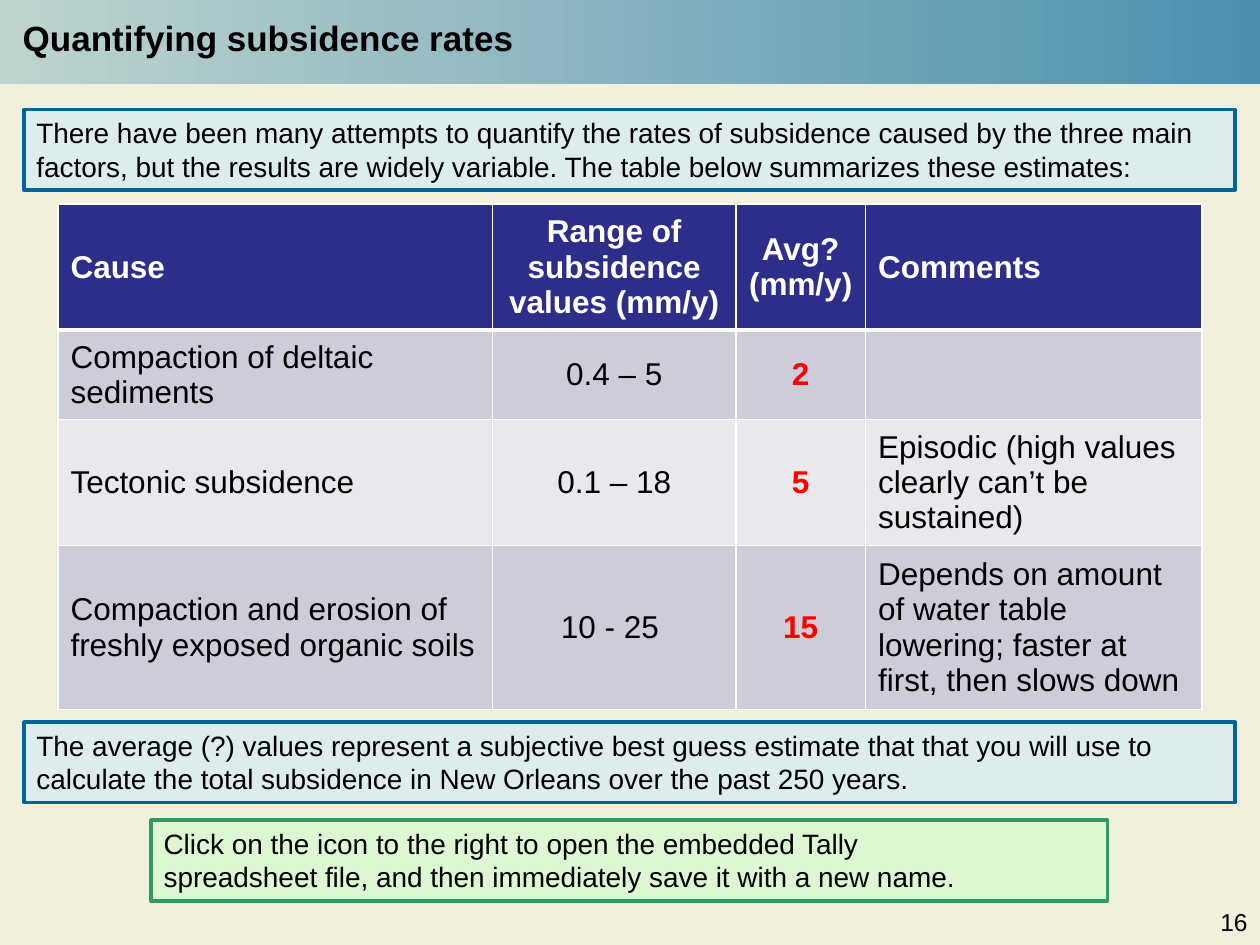
from dataclasses import dataclass

from lxml.etree import SubElement
from pptx import Presentation
from pptx.dml.color import RGBColor as Rgb
from pptx.enum.shapes import MSO_SHAPE as Shape
from pptx.enum.text import MSO_ANCHOR as Anchor, MSO_AUTO_SIZE as Fit, PP_ALIGN as Align
from pptx.oxml.ns import qn
from pptx.util import Inches, Pt


@dataclass(frozen=True)
class Theme:
    font: str = "Arial"
    title_size: int = 20
    table_size: int = 18
    note_size: int = 16
    number_size: int = 14
    background: str = "F0F0DC"
    band_start: str = "BED3CE"
    band_end: str = "4B91AF"
    ink: str = "000000"
    white: str = "FFFFFF"
    emphasis: str = "FF0000"
    header: str = "2D2D8A"
    dark_row: str = "CDCDDA"
    light_row: str = "E8E8ED"
    note_fill: str = "CCECFF"
    note_line: str = "006699"
    action_fill: str = "CCFFCC"
    action_line: str = "339966"


def apply(target, formats):
    for key, value in formats.items():
        setattr(target, key, value)


def place(left, top, width, height):
    return [Inches(length) for length in (left, top, width, height)]


class SlideBuilder:
    def __init__(self, slide, theme):
        self.slide = slide
        self.theme = theme
        background = slide.background.fill
        background.solid()
        background.fore_color.rgb = Rgb.from_string(theme.background)

    def set_text(self, paragraph, text, size, color=None, bold=False, align=Align.LEFT):
        paragraph.text = text
        paragraph.alignment = align
        apply(paragraph.font, {"name": self.theme.font, "size": Pt(size), "bold": bold})
        paragraph.font.color.rgb = Rgb.from_string(color or self.theme.ink)

    def rectangle(self, box):
        rectangle = self.slide.shapes.add_shape(Shape.RECTANGLE, *place(*box))
        rectangle.shadow.inherit = False
        return rectangle

    def band(self, box):
        band = self.rectangle(box)
        band.line.fill.background()
        band.fill.gradient()
        band.fill.gradient_angle = 0
        colors = (self.theme.band_start, self.theme.band_end)
        for stop, color in zip(band.fill.gradient_stops, colors):
            stop.color.rgb = Rgb.from_string(color)
        self.slide.shapes.title._element.addprevious(band._element)

    def title(self, text, box):
        title = self.slide.shapes.title
        apply(title, dict(zip(("left", "top", "width", "height"), place(*box))))
        apply(title.text_frame, {"word_wrap": False, "auto_size": Fit.NONE,
                                 "vertical_anchor": Anchor.MIDDLE})
        self.set_text(title.text_frame.paragraphs[0], text, self.theme.title_size, bold=True)

    def page_number(self, text, box):
        frame = self.slide.shapes.add_textbox(*place(*box)).text_frame
        frame.word_wrap = True
        self.set_text(frame.paragraphs[0], text, self.theme.number_size, align=Align.RIGHT)

    def note(self, text, box, fill, line):
        note = self.rectangle(box)
        note.fill.solid()
        note.fill.fore_color.rgb = Rgb.from_string(fill)
        tint = note._element.spPr.find(qn("a:solidFill"))[0]
        SubElement(tint, qn("a:alpha"), val="50000")
        note.line.color.rgb = Rgb.from_string(line)
        note.line.width = Pt(2)
        apply(note.text_frame, {"word_wrap": True, "vertical_anchor": Anchor.TOP})
        paragraph = note.text_frame.paragraphs[0]
        self.set_text(paragraph, text, self.theme.note_size)
        paragraph.space_after = Pt(3)

    def borders(self, cell, widths):
        properties = cell._tc.get_or_add_tcPr()
        for side, width in widths.items():
            edge = SubElement(properties, qn(f"a:ln{side}"), w=str(Pt(width)))
            fill = SubElement(edge, qn("a:solidFill"))
            SubElement(fill, qn("a:srgbClr"), val=self.theme.white)

    def table(self, rows, box, widths, heights):
        theme = self.theme
        table = self.slide.shapes.add_table(len(rows), len(widths), *place(*box)).table
        for column, width in zip(table.columns, widths):
            column.width = Inches(width)
        for row, height in zip(table.rows, heights):
            row.height = Inches(height)
        for r, texts in enumerate(rows):
            heading = r == 0
            row_fill = theme.header if heading else (theme.light_row, theme.dark_row)[r % 2]
            edges = {"L": 1, "R": 1, "T": 3 if r == 1 else 1, "B": 3 if heading else 1}
            for c, text in enumerate(texts):
                cell = table.cell(r, c)
                average = c == 2
                self.borders(cell, edges)
                cell.fill.solid()
                cell.fill.fore_color.rgb = Rgb.from_string(row_fill)
                cell.vertical_anchor = Anchor.MIDDLE
                color = theme.white if heading else theme.emphasis if average else theme.ink
                cell.text_frame.text = text
                for paragraph in cell.text_frame.paragraphs:
                    self.set_text(paragraph, paragraph.text, theme.table_size, color,
                                  heading or average, Align.CENTER if c in (1, 2) else Align.LEFT)


ESTIMATES = [
    ("Cause", "Range of subsidence values (mm/y)", "Avg?\n(mm/y)", "Comments"),
    ("Compaction of deltaic sediments", "0.4 – 5", "2", ""),
    ("Tectonic subsidence", "0.1 – 18", "5",
     "Episodic (high values clearly can’t be sustained)"),
    ("Compaction and erosion of freshly exposed organic soils", "10 - 25 ", "15",
     "Depends on amount of water table lowering; faster at first, then slows down"),
]


def main():
    deck = Presentation()
    apply(deck, {"slide_width": Inches(10), "slide_height": Inches(7.5)})
    theme = Theme()
    builder = SlideBuilder(deck.slides.add_slide(deck.slide_layouts[5]), theme)
    builder.band((0, 0, 10, 0.67))
    builder.title("Quantifying subsidence rates", (0.08, 0.08, 4.13, 0.44))
    builder.page_number("16", (9.56, 7.15, 0.44, 0.35))
    builder.note(
        "There have been many attempts to quantify the rates of subsidence caused by the "
        "three main factors, but the results are widely variable. The table below "
        "summarizes these estimates:",
        (0.19, 0.87, 9.61, 0.64), theme.note_fill, theme.note_line)
    builder.table(ESTIMATES, (0.46, 1.62, 9.08, 4),
                  (3.45, 1.93, 1.03, 2.67), (0.99, 0.71, 1, 1.3))
    builder.note(
        "The average (?) values represent a subjective best guess estimate that that you "
        "will use to calculate the total subsidence in New Orleans over the past 250 years.",
        (0.19, 5.73, 9.61, 0.64), theme.note_fill, theme.note_line)
    builder.note(
        "Click on the icon to the right to open the embedded Tally\v"
        "spreadsheet file, and then immediately save it with a new name.",
        (1.2, 6.51, 7.59, 0.64), theme.action_fill, theme.action_line)
    deck.save("out.pptx")


if __name__ == "__main__":
    main()
